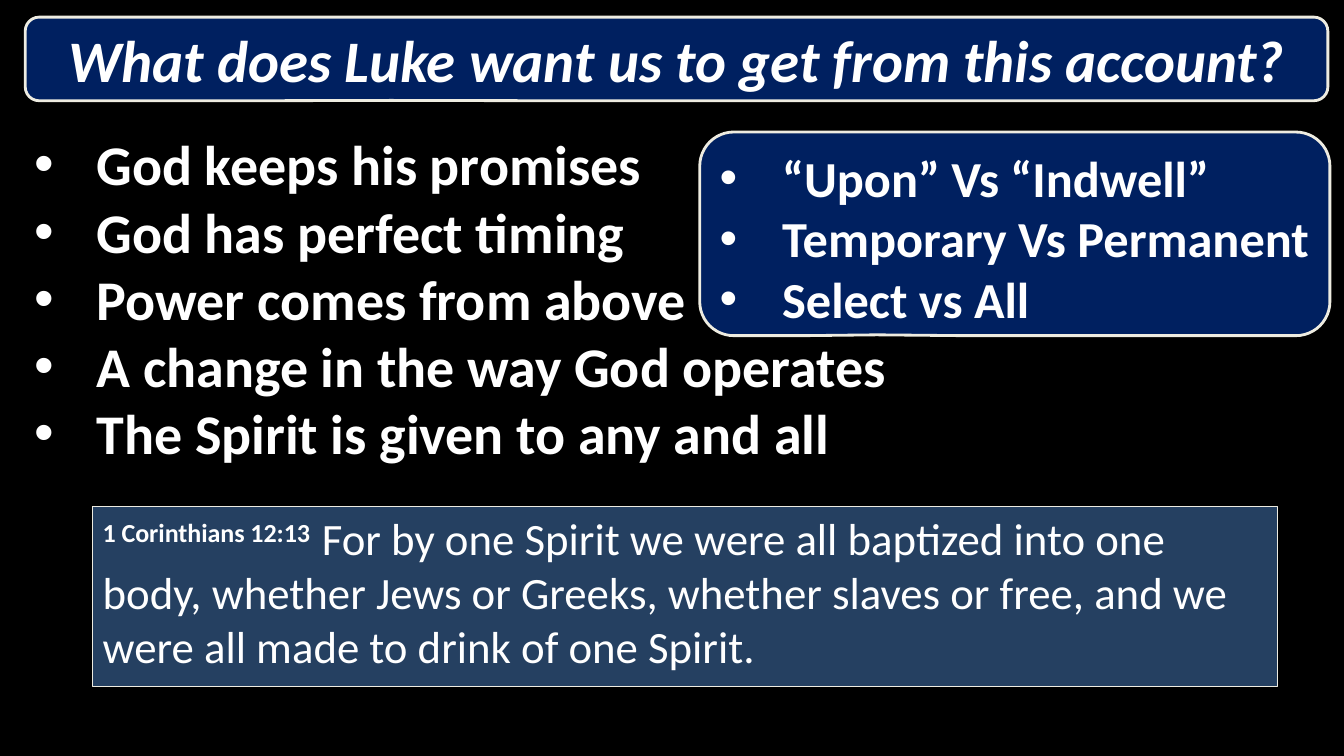
from lxml.etree import SubElement
from pptx import Presentation
from pptx.dml.color import RGBColor
from pptx.enum.shapes import MSO_SHAPE as Shape
from pptx.enum.text import MSO_ANCHOR as Anchor, PP_ALIGN as Align
from pptx.oxml.ns import qn
from pptx.util import Inches, Pt

COLORS = {
    "background": "000000",
    "navy": "002060",
    "slate": "254061",
    "border": "EEECE1",
    "text": "FFFFFF",
}
CALLOUT_SHAPE = (-0.219, 0.496, 0.167)
BULLET_INDENT = Inches(0.62)

LESSONS = [
    "God keeps his promises",
    "God has perfect timing",
    "Power comes from above",
    "A change in the way God operates",
    "The Spirit is given to any and all",
]
CONTRASTS = ["“Upon” Vs “Indwell”", "Temporary Vs Permanent", "Select vs All"]
VERSE_LABEL = "1 Corinthians 12:13  "
VERSE = (
    "For by one Spirit we were all baptized into one body, whether Jews or Greeks, "
    "whether slaves or free, and we were all made to drink of one Spirit."
)


def color(name):
    return RGBColor.from_string(COLORS[name])


def add_box(page, kind, place, fill=None, line_width=2):
    """Add a top-anchored box; without a fill it is invisible."""
    box = page.shapes.add_shape(kind, *map(Inches, place))
    box.shadow.inherit = False
    if fill:
        box.fill.solid()
        box.fill.fore_color.rgb = color(fill)
        box.line.color.rgb = color("border")
        box.line.width = Pt(line_width)
    else:
        box.fill.background()
        box.line.fill.background()
    box.text_frame.word_wrap = True
    box.text_frame.vertical_anchor = Anchor.TOP
    return box


def add_callout(page, place, fill=None):
    box = add_box(page, Shape.ROUNDED_RECTANGULAR_CALLOUT, place, fill)
    for index, value in enumerate(CALLOUT_SHAPE):
        box.adjustments[index] = value
    return box


def add_span(para, text, size, **formats):
    span = para.add_run()
    span.text = text
    span.font.color.rgb = color("text")
    values = {"name": "Calibri", "size": Pt(size), "bold": True, **formats}
    for name, value in values.items():
        setattr(span.font, name, value)
    return span


def add_bullets(box, lines, size):
    frame = box.text_frame
    for index, line in enumerate(lines):
        para = frame.add_paragraph() if index else frame.paragraphs[0]
        para.alignment = Align.LEFT
        add_span(para, line, size)
        properties = para._p.get_or_add_pPr()
        properties.set("marL", str(BULLET_INDENT))
        properties.set("indent", str(-BULLET_INDENT))
        SubElement(properties, qn("a:buFont"), typeface="Arial")
        SubElement(properties, qn("a:buChar"), char="•")


def add_title(page, text):
    box = add_callout(page, (0.25, 0.17, 12.92, 0.83), "navy")
    box.text_frame.vertical_anchor = Anchor.MIDDLE
    para = box.text_frame.paragraphs[0]
    para.alignment = Align.CENTER
    add_span(para, text, 42, italic=True)


def add_verse(page, label, verse):
    box = add_box(page, Shape.RECTANGLE, (0.92, 5.02, 11.75, 1.79), "slate", 0.75)
    para = box.text_frame.paragraphs[0]
    para.alignment = Align.LEFT
    reference = add_span(para, label, 32)
    reference.font._element.set("baseline", "30000")  # superscript
    add_span(para, verse, 32, bold=False)


def main():
    deck = Presentation()
    deck.slide_width, deck.slide_height = Inches(13.33), Inches(7.5)
    page = deck.slides.add_slide(deck.slide_layouts[6])
    page.background.fill.solid()
    page.background.fill.fore_color.rgb = color("background")

    # Heading
    add_title(page, "What does Luke want us to get from this account?")

    # Lessons and the contrasts beside them
    add_bullets(add_callout(page, (0, 1, 9.33, 4.91)), LESSONS, 40)
    add_bullets(add_callout(page, (6.94, 1.31, 6.25, 2.02), "navy"), CONTRASTS, 36)

    # Scripture quotation
    add_verse(page, VERSE_LABEL, VERSE)

    deck.save("out.pptx")


if __name__ == "__main__":
    main()
